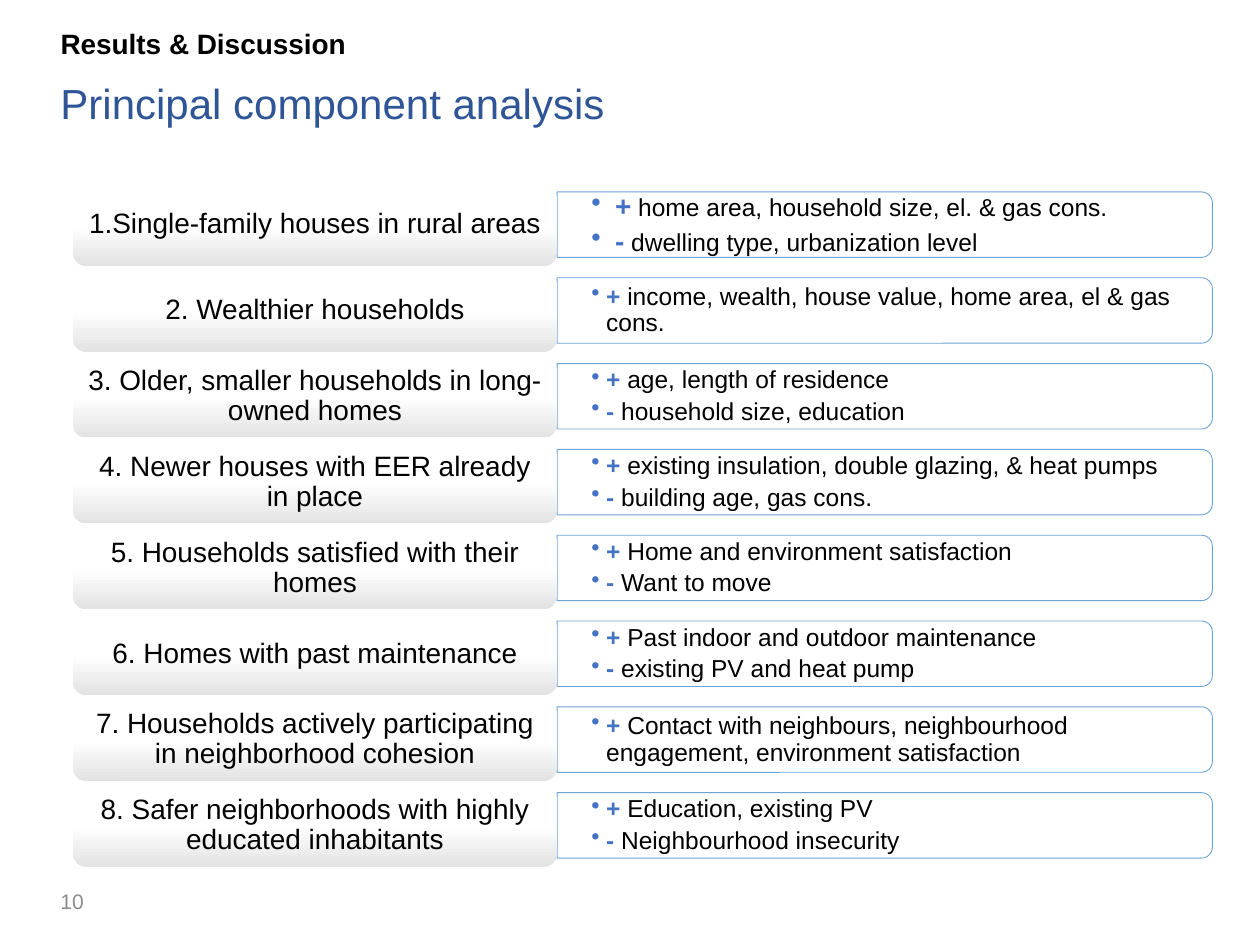
from copy import deepcopy

from lxml import etree
from pptx import Presentation
from pptx.dml.color import RGBColor
from pptx.enum.shapes import MSO_SHAPE
from pptx.enum.text import MSO_ANCHOR, MSO_AUTO_SIZE, PP_ALIGN
from pptx.oxml.ns import qn
from pptx.util import Cm, Pt

ROUND, TAB = MSO_SHAPE.ROUNDED_RECTANGLE, MSO_SHAPE.ROUND_2_SAME_RECTANGLE
TOP, MIDDLE = MSO_ANCHOR.TOP, MSO_ANCHOR.MIDDLE
LEFT, CENTER = PP_ALIGN.LEFT, PP_ALIGN.CENTER
FIXED = MSO_AUTO_SIZE.NONE

BLACK = RGBColor(0x00, 0x00, 0x00)
WHITE = RGBColor(0xFF, 0xFF, 0xFF)
NAVY = RGBColor(0x2F, 0x55, 0x97)
BLUE = RGBColor(0x44, 0x72, 0xC4)
SKY = RGBColor(0x5B, 0x9B, 0xD5)
GREY = RGBColor(0x8C, 0x8C, 0x8C)
PALE = RGBColor(0xE3, 0xE3, 0xE3)

PARTS = [
    ("1.Single-family houses in rural areas",
     ["+ home area, household size, el. & gas cons.",
      "- dwelling type, urbanization level"]),
    ("2. Wealthier households",
     ["+ income, wealth, house value, home area, el & gas cons."]),
    ("3. Older, smaller households in long-owned homes",
     ["+ age, length of residence", "- household size, education"]),
    ("4. Newer houses with EER already in place",
     ["+ existing insulation, double glazing, & heat pumps",
      "- building age, gas cons."]),
    ("5. Households satisfied with their homes",
     ["+ Home and environment satisfaction", "- Want to move"]),
    ("6. Homes with past maintenance",
     ["+ Past indoor and outdoor maintenance", "- existing PV and heat pump"]),
    ("7. Households actively participating in neighborhood cohesion",
     ["+ Contact with neighbours, neighbourhood engagement, "
      "environment satisfaction"]),
    ("8. Safer neighborhoods with highly educated inhabitants",
     ["+ Education, existing PV", "- Neighbourhood insecurity"]),
]


def apply(item, **vals):
    """Set each named value on the item."""
    for name, val in vals.items():
        setattr(item, name, val)


def set_frame(frame, anchor, side=0.25, edge=0.13):
    """Set wrapping, anchor and margins of a text frame."""
    apply(frame, word_wrap=True, auto_size=FIXED, vertical_anchor=anchor,
          margin_left=Cm(side), margin_right=Cm(side),
          margin_top=Cm(edge), margin_bottom=Cm(edge))


def add_run(para, text, size, color, bold=False):
    """Add a formatted run to a paragraph."""
    run = para.add_run()
    run.text = text
    apply(run.font, name="Arial", size=Pt(size), bold=bold)
    run.font.color.rgb = color


def write_line(shape, text, size, color, anchor=TOP, align=LEFT,
               bold=False, space=0.9):
    """Write one line of text into a shape."""
    para = shape.text_frame.paragraphs[0]
    apply(para, alignment=align, line_spacing=space)
    add_run(para, text, size, color, bold)
    shape.text_frame.vertical_anchor = anchor


def add_head(slide, x, y, w):
    """Place the title and the heading below it."""
    title = slide.shapes.title
    apply(title, left=Cm(x), top=Cm(y), width=Cm(w), height=Cm(0.64))
    set_frame(title.text_frame, TOP)
    write_line(title, "Results & Discussion", 16, BLACK, bold=True)
    head = slide.shapes.add_textbox(Cm(x), Cm(y + 1.07), Cm(w), Cm(1.88))
    set_frame(head.text_frame, TOP)
    write_line(head, "Principal component analysis", 24, NAVY)


def add_label(slide, x, y, w, h, text):
    """Place a shaded label."""
    label = slide.shapes.add_shape(ROUND, Cm(x), Cm(y), Cm(w), Cm(h))
    label.shadow.inherit = False
    label.line.fill.background()
    fill = label.fill
    fill.gradient()
    fill.gradient_angle = 270
    first = label._element.spPr.find(".//" + qn("a:gs"))
    first.addnext(deepcopy(first))
    for stop, (spot, color) in zip(
            fill.gradient_stops, [(0, WHITE), (0.5, WHITE), (1, PALE)]):
        stop.position = spot
        stop.color.rgb = color
    set_frame(label.text_frame, MIDDLE, 0.18, 0.08)
    write_line(label, text, 16, BLACK, MIDDLE, CENTER)


def add_panel(slide, x, y, w, h, items, size, indent):
    """Place an outlined panel with its signed bullets."""
    panel = slide.shapes.add_shape(
        TAB, Cm(x + (w - h) / 2), Cm(y + (h - w) / 2), Cm(h), Cm(w))
    panel.rotation = 90
    panel.shadow.inherit = False
    panel.fill.solid()
    panel.fill.fore_color.rgb = WHITE
    panel.line.color.rgb = SKY
    panel.line.width = Pt(0.5)
    for color in panel._element.spPr.iter(qn("a:srgbClr")):
        etree.SubElement(color, qn("a:alpha"), val="90000")

    box = slide.shapes.add_textbox(
        Cm(x), Cm(y + 0.07), Cm(w - 0.08), Cm(h - 0.13))
    frame = box.text_frame
    set_frame(frame, MIDDLE, 0.69, 0.36)
    for num, item in enumerate(items):
        para = frame.add_paragraph() if num else frame.paragraphs[0]
        props = para._p.get_or_add_pPr()
        props.set("marL", str(Cm(indent)))
        props.set("indent", str(-Cm(indent)))
        etree.SubElement(props, qn("a:buChar"), char="•")
        apply(para, level=1, alignment=LEFT, line_spacing=0.9)
        if num:
            para.space_before = Pt(2.9)
        add_run(para, item[0], size, BLUE, True)
        add_run(para, item[1:], 14, BLACK)


def add_list(slide, x, y, pitch):
    """Place all components in rows of equal pitch."""
    for num, (name, items) in enumerate(PARTS):
        top = y + num * pitch
        size, indent = (14, 0.3) if num else (16, 0.48)
        add_panel(slide, x + 9.76, top + 0.16, 13.21, 1.32,
                  items, size, indent)
        add_label(slide, x, top, 9.76, 1.65, name)


def add_foot(slide, x, y, w, h):
    """Place the page number."""
    foot = slide.shapes.add_textbox(Cm(x), Cm(y), Cm(w), Cm(h))
    set_frame(foot.text_frame, MIDDLE)
    write_line(foot, "10", 12, GREY, MIDDLE, space=1.0)


def main():
    """Build and save the slide."""
    deck = Presentation()
    apply(deck, slide_width=Cm(25.4), slide_height=Cm(19.05))
    slide = deck.slides.add_slide(deck.slide_layouts[5])
    add_head(slide, 0.97, 0.48, 23.47)
    add_foot(slide, 0.97, 17.65, 5.72, 1.02)
    add_list(slide, 1.47, 3.71, 1.73)
    deck.save("out.pptx")


if __name__ == "__main__":
    main()
